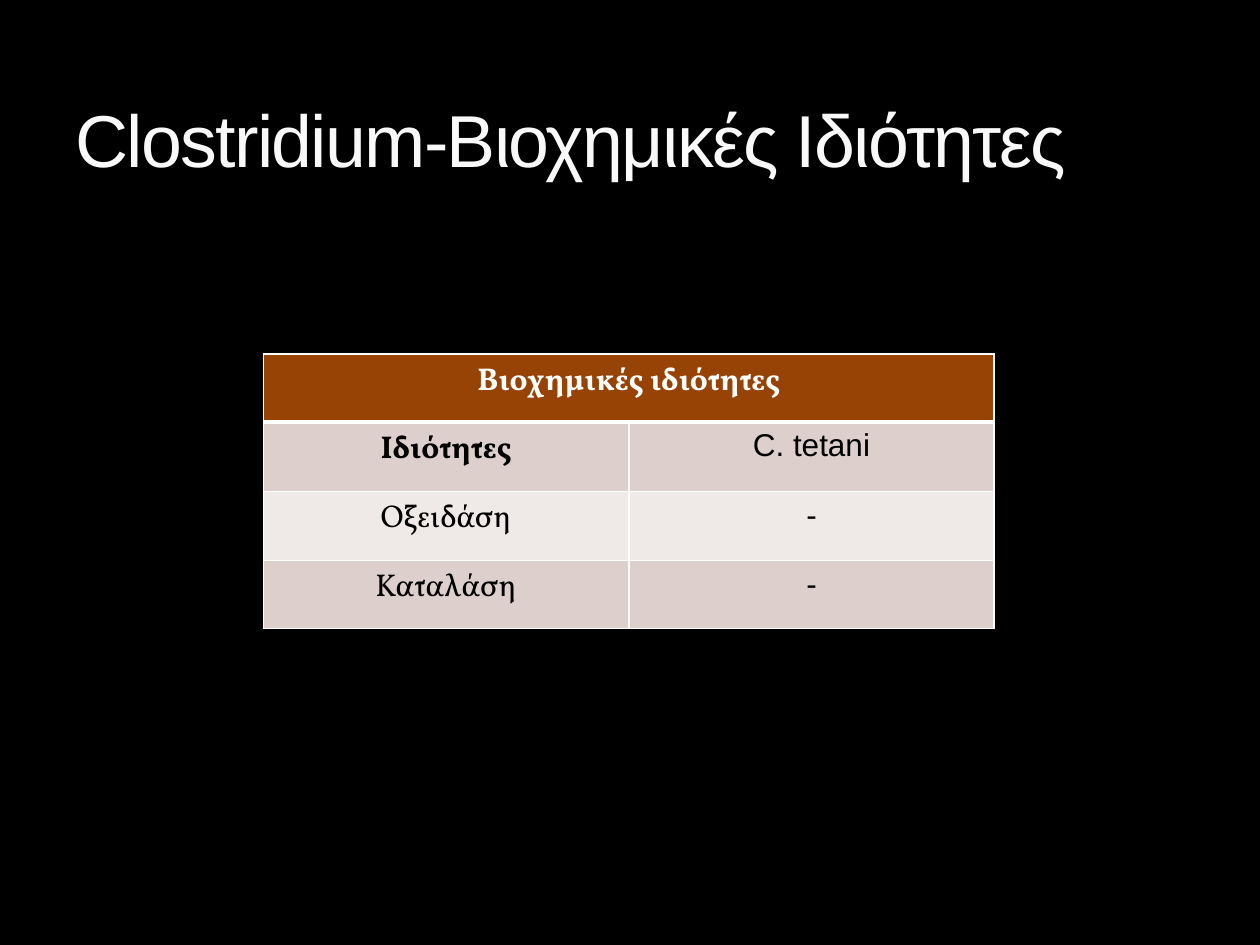
from dataclasses import dataclass

from lxml.etree import fromstring
from pptx import Presentation
from pptx.dml.color import RGBColor
from pptx.enum.text import MSO_ANCHOR, MSO_AUTO_SIZE, PP_ALIGN
from pptx.oxml.ns import nsdecls
from pptx.util import Inches, Pt


@dataclass(frozen=True)
class Theme:
    back: str = "000000"
    title: str = "F9F9F9"
    edge: str = "462219"
    head: str = "964305"
    bands: tuple = ("DDCFCC", "EFE9E7")
    light: str = "FFFFFF"
    dark: str = "000000"
    sans: str = "Arial"
    serif: str = "Vollkorn"
    big: int = 42
    body: int = 18


def line(tag, color, width, alpha=100):
    """Line element for a cell border or a text outline."""
    return fromstring(
        f'<a:{tag} {nsdecls("a")} w="{Pt(width)}"><a:solidFill>'
        f'<a:srgbClr val="{color}"><a:alpha val="{alpha * 1000}"/></a:srgbClr>'
        f'</a:solidFill><a:prstDash val="solid"/></a:{tag}>')


class Deck:
    def __init__(self, theme):
        self.theme = theme
        self.prs = Presentation()
        self.prs.slide_width, self.prs.slide_height = Inches(10), Inches(7.5)
        self.slide = self.prs.slides.add_slide(self.prs.slide_layouts[5])
        fill = self.slide.background.fill
        fill.solid()
        fill.fore_color.rgb = RGBColor.from_string(theme.back)

    def label(self, para, text, color, align, **style):
        para.alignment = align
        run = para.add_run()
        run.text = text
        for key, value in style.items():
            setattr(run.font, key, value)
        run.font.color.rgb = RGBColor.from_string(color)
        return run

    def title(self, text, box):
        look = self.theme
        shape = self.slide.shapes.title
        for key, value in zip(("left", "top", "width", "height"), box):
            setattr(shape, key, Inches(value))
        frame = shape.text_frame
        form = {"word_wrap": True, "auto_size": MSO_AUTO_SIZE.NONE,
                "vertical_anchor": MSO_ANCHOR.BOTTOM}
        for key, value in form.items():
            setattr(frame, key, value)
        run = self.label(frame.paragraphs[0], text, look.title, PP_ALIGN.LEFT,
                         name=look.sans, size=Pt(look.big))
        # Tight letters with a faint outline
        props = run._r.get_or_add_rPr()
        props.set("spc", "-100")
        props.insert(0, line("ln", look.edge, 0.25, 25))

    def cell(self, cell, fill, widths):
        props = cell._tc.get_or_add_tcPr()
        for side, width in widths.items():
            props.append(line(f"ln{side}", self.theme.light, width))
        cell.fill.solid()
        cell.fill.fore_color.rgb = RGBColor.from_string(fill)

    def table(self, head, rows, box, heights):
        look = self.theme
        count = len(rows[0])
        table = self.slide.shapes.add_table(
            len(heights), count, *map(Inches, box)).table
        for col in table.columns:
            col.width = Inches(box[2] / count)
        for row, height in zip(table.rows, heights):
            row.height = Inches(height)

        # Header across all columns, with a thick rule below
        table.cell(0, 0).merge(table.cell(0, count - 1))
        for i in range(count):
            self.cell(table.cell(0, i), look.head, {"L": 1, "R": 1, "T": 1, "B": 3})
        self.label(table.cell(0, 0).text_frame.paragraphs[0], head, look.light,
                   PP_ALIGN.CENTER, name=look.serif, size=Pt(look.body), bold=True)

        # Banded rows: names in serif, values in sans
        for r, row in enumerate(rows, 1):
            for c, text in enumerate(row):
                cell = table.cell(r, c)
                self.cell(cell, look.bands[(r - 1) % 2],
                          {"L": 1, "R": 1, "T": 3 if r == 1 else 1, "B": 1})
                self.label(cell.text_frame.paragraphs[0], text, look.dark,
                           PP_ALIGN.CENTER, name=look.sans if c else look.serif,
                           size=Pt(look.body), bold=r == 1 and c == 0)


def main():
    deck = Deck(Theme())
    deck.title("Clostridium-Βιοχημικές Ιδιότητες", (0.5, 0.17, 9, 1.33))
    deck.table("Βιοχημικές ιδιότητες",
               [("Ιδιότητες", "C. tetani"), ("Οξειδάση", "-"), ("Καταλάση", "-")],
               (2.09, 2.81, 5.8, 2.18), (0.54, 0.55, 0.55, 0.54))
    deck.prs.save("out.pptx")


if __name__ == "__main__":
    main()
